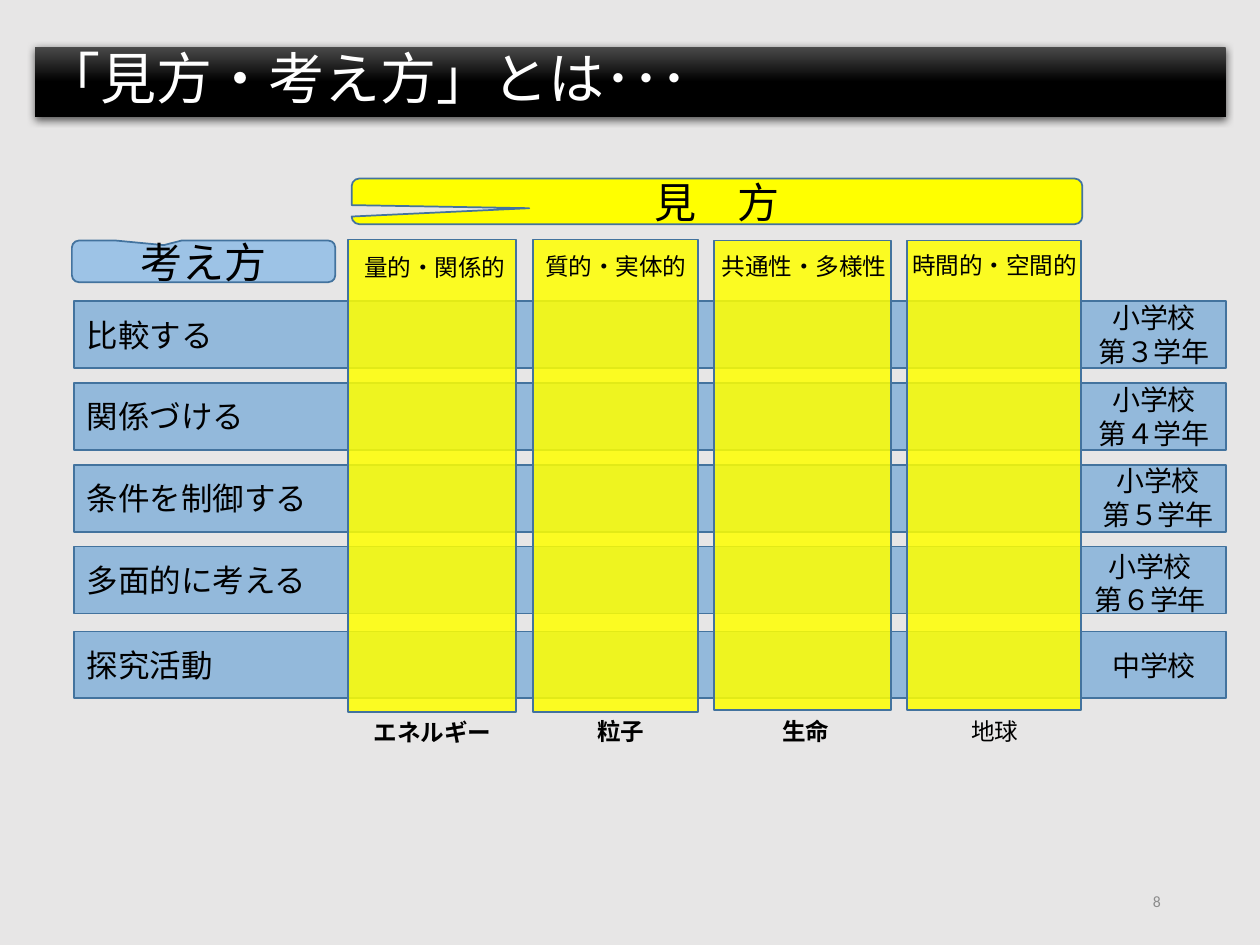
from lxml.etree import SubElement
from pptx import Presentation
from pptx.dml.color import RGBColor
from pptx.enum.shapes import MSO_SHAPE
from pptx.enum.text import MSO_ANCHOR, MSO_AUTO_SIZE, PP_ALIGN
from pptx.oxml.ns import qn
from pptx.util import Cm, Pt

COLORS = {
    "background": "E7E6E6",
    "row": "5B9BD5",
    "thinking": "9DC3E6",
    "view": "FFFF00",
    "outline": "43739E",
    "text": "000000",
    "title": "FFFFFF",
    "number": "8C8C8C",
    "banner_top": "4B4B4B",
    "banner": "000000",
}
ROWS = [
    ("比較する", 6.07, "小学校\n第３学年", 21.59, 5.94),
    ("関係づける", 7.72, "小学校\n第４学年", 21.59, 7.59),
    ("条件を制御する", 9.37, "小学校\n第５学年", 21.67, 9.22),
    ("多面的に考える", 11.02, "小学校\n第６学年", 21.51, 10.95),
    ("探究活動", 12.73, "中学校", 21.59, 12.95),
]
COLUMNS = [(7.01, 4.83, 3.4, 9.53), (10.74, 4.83, 3.33, 9.53),
           (14.4, 4.85, 3.56, 9.47), (18.29, 4.85, 3.51, 9.47)]
VIEWS = [("量的・関係的", 7.09, 4.98, 3.63), ("質的・実体的", 10.74, 4.95, 3.53),
         ("共通性・多様性", 14.3, 4.95, 3.89), ("時間的・空間的", 18.14, 4.93, 4.29)]
FIELDS = [("エネルギー", 7.29, 14.35, True), ("粒子", 11.79, 14.33, True),
          ("生命", 15.52, 14.33, True), ("地球", 19.33, 14.33, False)]


def color(name):
    """Return the named colour."""
    return RGBColor.from_string(COLORS[name])


def write_text(shape, text, size=18, font="Calibri", ink="text", bold=False,
               align=PP_ALIGN.LEFT, anchor=MSO_ANCHOR.MIDDLE, spacing=None):
    """Write one paragraph per line of text with the given format."""
    frame = shape.text_frame
    frame.word_wrap = True
    frame.vertical_anchor = anchor
    frame.text = text
    for paragraph in frame.paragraphs:
        paragraph.alignment = align
        paragraph.line_spacing = spacing
        run = paragraph.runs[0]
        run.font.size = Pt(size)
        run.font.name = font
        run.font.bold = bold
        run.font.color.rgb = color(ink)
        SubElement(run.font._element, qn("a:ea"), typeface=font)


def add_label(slide, text, box, grow=True, **text_format):
    """Add a text box that grows with its text unless told otherwise."""
    shape = slide.shapes.add_textbox(*map(Cm, box))
    write_text(shape, text, **text_format)
    if grow:
        shape.text_frame.auto_size = MSO_AUTO_SIZE.SHAPE_TO_FIT_TEXT


def add_block(slide, kind, box, fill, opacity=100):
    """Add an outlined preset shape with a solid, possibly translucent fill."""
    shape = slide.shapes.add_shape(kind, *map(Cm, box))
    shape.shadow.inherit = False
    shape.fill.solid()
    shape.fill.fore_color.rgb = color(fill)
    if opacity < 100:
        fill_color = shape._element.spPr.find(qn("a:solidFill"))[0]
        SubElement(fill_color, qn("a:alpha"), val=str(opacity * 1000))
    shape.line.color.rgb = color("outline")
    shape.line.width = Pt(1)
    return shape


def add_callout(slide, text, box, fill, adjustments):
    """Add a rounded callout with a centred heading."""
    shape = add_block(slide, MSO_SHAPE.ROUNDED_RECTANGULAR_CALLOUT, box, fill)
    for index, value in enumerate(adjustments):
        shape.adjustments[index] = value
    write_text(shape, text, size=24, align=PP_ALIGN.CENTER)


def add_banner(slide, text, box):
    """Add the title banner with its gradient and soft shadow."""
    shape = slide.shapes.add_shape(MSO_SHAPE.RECTANGLE, *map(Cm, box))
    shape.line.fill.background()
    shape.fill.gradient()
    shape.fill.gradient_angle = 270
    stops = (("banner_top", 0), ("banner", 0.5))
    for stop, (name, position) in zip(shape.fill.gradient_stops, stops):
        stop.color.rgb = color(name)
        stop.position = position
    shape.shadow.inherit = False
    effects = shape._element.spPr.find(qn("a:effectLst"))
    shadow = SubElement(effects, qn("a:outerShdw"), blurRad=str(Pt(4.5)),
                        dist=str(Pt(1.5)), dir="5400000", rotWithShape="0")
    shade = SubElement(shadow, qn("a:srgbClr"), val=COLORS["banner"])
    SubElement(shade, qn("a:alpha"), val="63000")
    frame = shape.text_frame
    frame.margin_left = frame.margin_right = Cm(0.18)
    frame.margin_top = frame.margin_bottom = Cm(0.1)
    write_text(shape, text, size=32, font="Noto Sans CJK JP", ink="title",
               anchor=MSO_ANCHOR.BOTTOM, spacing=0.9)


def main():
    """Build the slide and save it."""
    presentation = Presentation()
    presentation.slide_width, presentation.slide_height = Cm(25.4), Cm(19.05)
    slide = presentation.slides.add_slide(presentation.slide_layouts[6])
    slide.background.fill.solid()
    slide.background.fill.fore_color.rgb = color("background")

    for skill, top, *_ in ROWS:
        bar = add_block(slide, MSO_SHAPE.RECTANGLE, (1.5, top, 23.22, 1.35), "row", 60)
        write_text(bar, skill)
    for box in COLUMNS:
        add_block(slide, MSO_SHAPE.RECTANGLE, box, "view", 85)
    for view, left, top, width in VIEWS:
        add_label(slide, view, (left, top, width, 0.84), size=13.5,
                  anchor=MSO_ANCHOR.TOP)
    add_callout(slide, "考え方", (1.45, 4.85, 5.31, 0.84), "thinking",
                (-0.151, -0.39, 0.167))
    add_callout(slide, "見　方", (7.09, 3.6, 14.73, 0.92), "view",
                (-0.257, 0.151, 0.167))
    for field, left, top, bold in FIELDS:
        add_label(slide, field, (left, top, 3.15, 0.84), size=13.5, bold=bold,
                  anchor=MSO_ANCHOR.TOP)
    add_label(slide, "8", (17.93, 17.65, 5.72, 1.02), grow=False, size=9,
              ink="number", align=PP_ALIGN.RIGHT)
    add_banner(slide, "「見方・考え方」とは･･･", (0.71, 0.94, 24, 1.42))
    for _, _, grade, left, top in ROWS:
        height = 1.63 if "\n" in grade else 0.94
        add_label(slide, grade, (left, top, 3.35, height), size=16,
                  align=PP_ALIGN.CENTER, anchor=MSO_ANCHOR.TOP)
    presentation.save("out.pptx")


if __name__ == "__main__":
    main()
